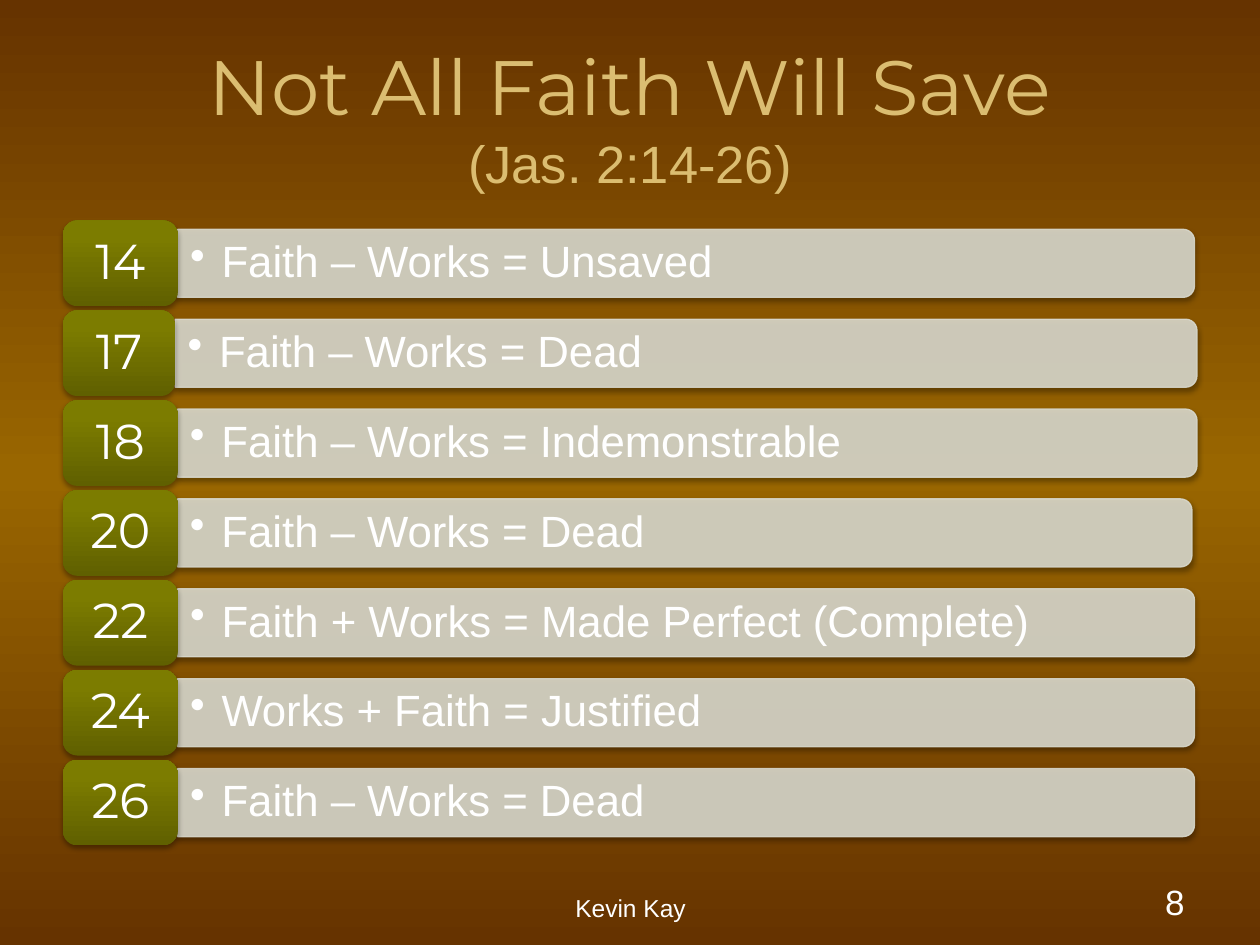
from lxml import etree
from pptx import Presentation
from pptx.dml.color import RGBColor
from pptx.enum import shapes, text
from pptx.oxml.ns import qn
from pptx.util import Inches, Pt

WHITE, GOLD, STONE = "FFFFFF", "DBBD71", "D8D8CC"
BACKGROUND_STOPS = [(0, "663300"), (50, "996600"), (100, "663300")]
BADGE_STOPS = [(0, "606000"), (80, "7C7C00"), (100, "7D7D00")]

# Verse, statement, left and right edge of the bar
VERSES = [
    ("14", "Faith – Works = Unsaved", 1.41, 9.48),
    ("17", "Faith – Works = Dead", 1.39, 9.5),
    ("18", "Faith – Works = Indemonstrable", 1.41, 9.5),
    ("20", "Faith – Works = Dead", 1.41, 9.46),
    ("22", "Faith + Works = Made Perfect (Complete)", 1.41, 9.48),
    ("24", "Works + Faith = Justified", 1.41, 9.48),
    ("26", "Faith – Works = Dead", 1.41, 9.48),
]
BADGE_LEFT, BADGE_HEIGHT = 0.5, 0.68
BAR_HEIGHT, STATEMENT_HEIGHT = 0.54, 0.49
FIRST_CENTRE, LAST_CENTRE = 2.09, 6.37
ROW_PITCH = (LAST_CENTRE - FIRST_CENTRE) / (len(VERSES) - 1)


def colour(hex_code):
    return RGBColor.from_string(hex_code)


def add_xml(parent, tag, **attributes):
    return etree.SubElement(parent, qn(tag), attributes)


def set_gradient(fill, element, stops, angle):
    fill.gradient()
    fill.gradient_angle = angle
    stop_list = next(element.iter(qn("a:gsLst")))
    for old_stop in list(stop_list):
        stop_list.remove(old_stop)
    for position, hex_code in stops:
        stop = add_xml(stop_list, "a:gs", pos=str(position * 1000))
        add_xml(stop, "a:srgbClr", val=hex_code)


def set_shadow(shape):
    shape.shadow.inherit = False
    effects = shape._element.spPr.find(qn("a:effectLst"))
    shadow = add_xml(effects, "a:outerShdw", blurRad=str(Pt(3.1)), dist=str(Pt(1.8)),
                     dir="5400000", rotWithShape="0")
    black = add_xml(shadow, "a:srgbClr", val="000000")
    add_xml(black, "a:alpha", val="35000")


def style_font(font, name, size, hex_code):
    font.name, font.size = name, Pt(size)
    font.color.rgb = colour(hex_code)


def write_line(frame, content, font_name, size, align, anchor):
    frame.word_wrap = True
    frame.vertical_anchor = anchor
    frame.text = content
    line = frame.paragraphs[0]
    line.alignment = align
    style_font(line.runs[0].font, font_name, size, WHITE)
    return line


def add_text(slide, box, content, size, align, anchor):
    frame = slide.shapes.add_textbox(*map(Inches, box)).text_frame
    return write_line(frame, content, "Arial", size, align, anchor)


def add_title(slide):
    title = slide.shapes.title
    title.left, title.top, title.width, title.height = map(Inches, (0.5, 0.3, 9, 1.25))
    title.text_frame.text = "Not All Faith Will Save\v(Jas. 2:14-26)"
    title.text_frame.vertical_anchor = text.MSO_ANCHOR.MIDDLE
    heading = title.text_frame.paragraphs[0]
    heading.alignment = text.PP_ALIGN.CENTER
    name, reference = heading.runs
    style_font(name.font, "Montserrat", 44, GOLD)
    style_font(reference.font, "Arial", 30, GOLD)


def add_bar(slide, left, right, centre):
    # Turned a quarter so that the two rounded corners face right
    length = right - left
    bar = slide.shapes.add_shape(
        shapes.MSO_SHAPE.ROUND_2_SAME_RECTANGLE,
        Inches((left + right - BAR_HEIGHT) / 2), Inches(centre - length / 2),
        Inches(BAR_HEIGHT), Inches(length))
    bar.rotation = 90
    bar.fill.solid()
    bar.fill.fore_color.rgb = colour(STONE)
    bar.line.color.rgb = colour(STONE)
    bar.line.width = Pt(0.75)
    for tint in bar._element.spPr.iter(qn("a:srgbClr")):
        add_xml(tint, "a:alpha", val="90000")
    set_shadow(bar)


def add_statement(slide, statement, left, right, centre):
    box = (left, centre - STATEMENT_HEIGHT / 2, right - left - 0.02, STATEMENT_HEIGHT)
    line = add_text(slide, box, statement, 25, text.PP_ALIGN.LEFT, text.MSO_ANCHOR.MIDDLE)
    properties = line._p.get_or_add_pPr()
    properties.set("marL", str(Inches(0.25)))
    properties.set("indent", str(Inches(-0.25)))
    add_xml(properties, "a:buChar", char="•")
    line.line_spacing = 0.9


def add_badge(slide, verse, right, centre):
    badge = slide.shapes.add_shape(
        shapes.MSO_SHAPE.ROUNDED_RECTANGLE,
        Inches(BADGE_LEFT), Inches(centre - BADGE_HEIGHT / 2),
        Inches(right - BADGE_LEFT), Inches(BADGE_HEIGHT))
    set_gradient(badge.fill, badge._element.spPr, BADGE_STOPS, 90)
    badge.line.fill.background()
    set_shadow(badge)
    number = write_line(badge.text_frame, verse, "Montserrat", 28,
                        text.PP_ALIGN.CENTER, text.MSO_ANCHOR.MIDDLE)
    number.line_spacing = 0.9


def main():
    deck = Presentation()
    deck.slide_width, deck.slide_height = Inches(10), Inches(7.5)
    slide = deck.slides.add_slide(deck.slide_layouts[5])
    set_gradient(slide.background.fill, slide._element, BACKGROUND_STOPS, 270)
    add_title(slide)

    # Verse rows
    for row, (verse, statement, left, right) in enumerate(VERSES):
        centre = FIRST_CENTRE + row * ROW_PITCH
        add_bar(slide, left, right, centre)
        add_statement(slide, statement, left, right, centre)
        add_badge(slide, verse, left, centre)

    # Footer and page number
    bottom = text.MSO_ANCHOR.BOTTOM
    add_text(slide, (3.42, 6.87, 3.17, 0.5), "Kevin Kay", 14, text.PP_ALIGN.CENTER, bottom)
    add_text(slide, (7.17, 6.87, 2.33, 0.5), "8", 20, text.PP_ALIGN.RIGHT, bottom)
    deck.save("out.pptx")


if __name__ == "__main__":
    main()
